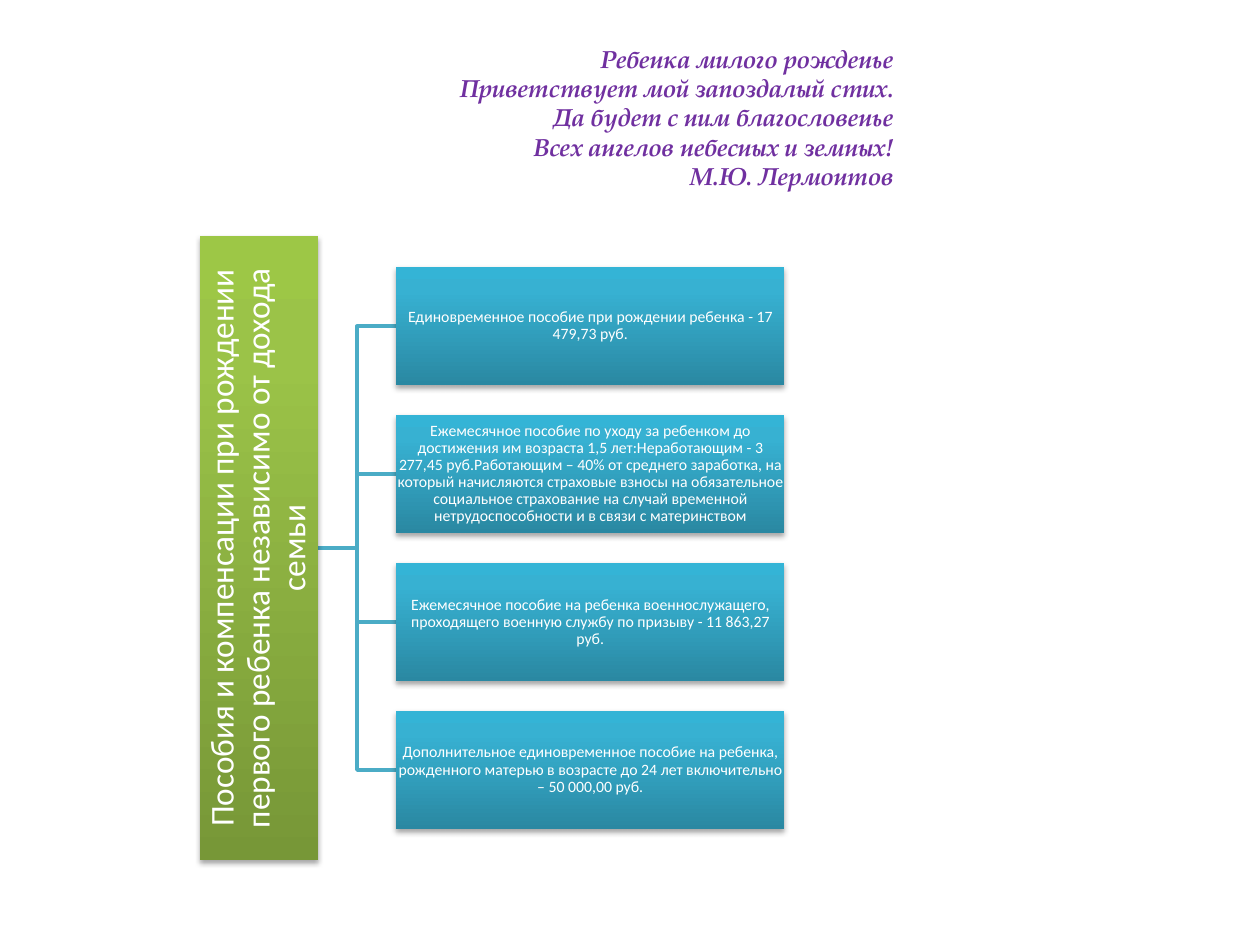
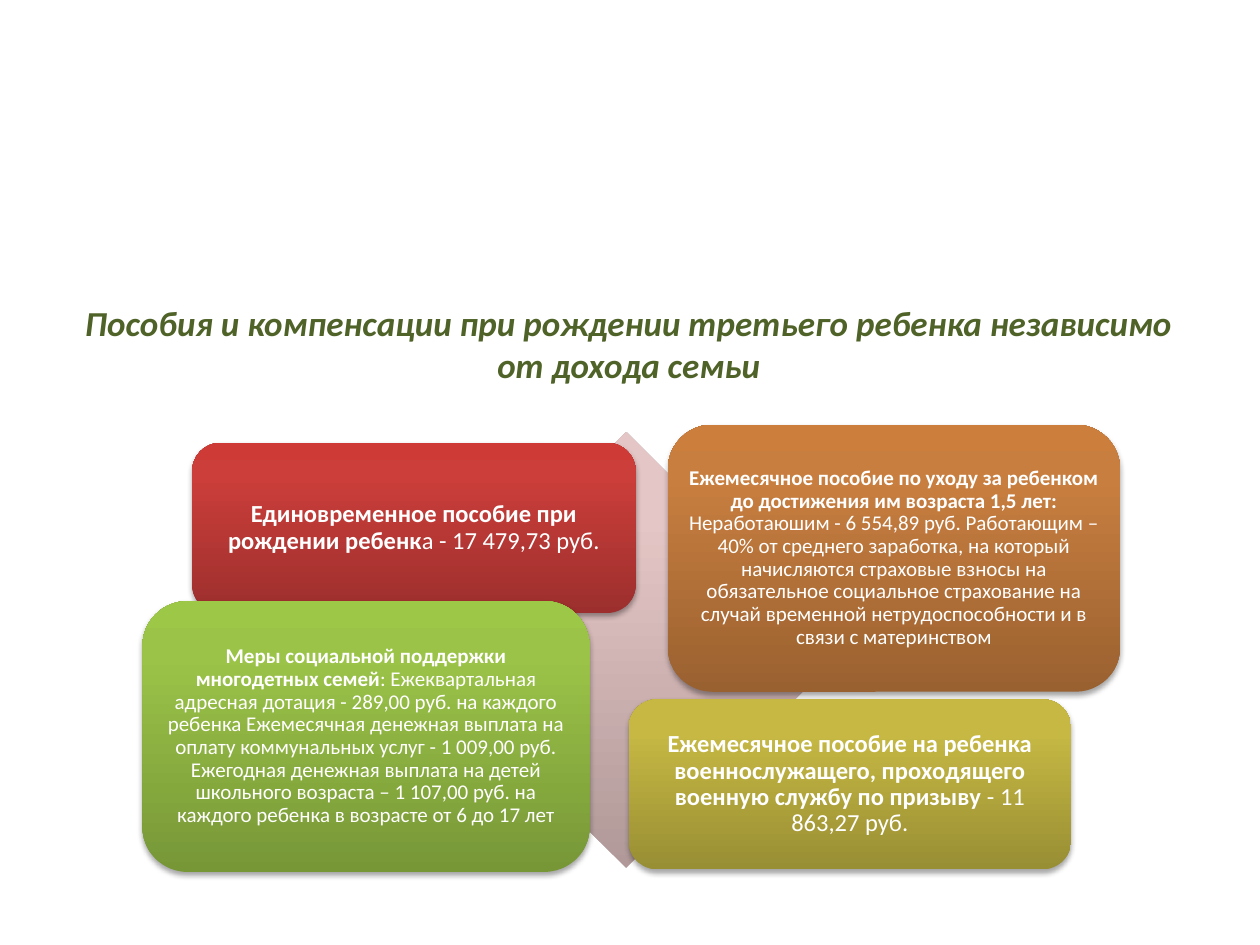
import pptx
import pptx.util
import pptx.oxml
import pptx.oxml.ns
import pptx.dml.color
import pptx.enum.shapes
import pptx.enum.text

KIND = pptx.enum.shapes.MSO_SHAPE
ALIGN = pptx.enum.text.PP_ALIGN
CELL = pptx.util.Inches(0.1)  # the slide is a grid of 100 by 75 cells
COLS, ROWS = 100, 75

HUES = {"white": "FFFFFF", "verse": "7030A0", "head": "4F6228", "link": "4BACC6",
        "shade": "000000"}
# Gradient stops at 0, 80 and 100 percent, from bottom to top
FADES = {
    "green": ("779737", "9BC348", "9DC746"),
    "blue": ("2A88A2", "37B1D2", "34B4D6"),
    "rose": ("B09998", "E5C6C6", "E6C7C6"),
    "red": ("9C2F2D", "CB3E3A", "CE3B37"),
    "brown": ("9A6130", "C87E3F", "CC7E3C"),
    "olive": ("988E34", "C6B843", "C9BB41"),
}

VERSE = """Ребенка милого рожденье
Приветствует мой запоздалый стих.
Да будет с ним благословенье
Всех ангелов небесных и земных!
М.Ю. Лермонтов"""
ROOT = "Пособия и компенсации при рождении первого ребенка независимо от дохода семьи"
ITEMS = [
    "Единовременное пособие при рождении ребенка - 17 479,73 руб.",
    "Ежемесячное пособие по уходу за ребенком до достижения им возраста 1,5 лет:"
    "Неработающим - 3 277,45 руб.Работающим – 40% от среднего заработка, на который "
    "начисляются страховые взносы на обязательное социальное страхование на случай "
    "временной нетрудоспособности и в связи с материнством",
    "Ежемесячное пособие на ребенка военнослужащего, проходящего военную службу "
    "по призыву - 11 863,27 руб.",
    "Дополнительное единовременное пособие на ребенка, рожденного матерью в возрасте "
    "до 24 лет включительно – 50 000,00 руб.",
]
HEAD = "Пособия и компенсации при рождении третьего ребенка независимо от дохода семьи"
# Place in cells, fade, text size, inset, bold text, plain text
CARDS = [
    ((3.95, 1.45, 35.2, 13.5), "red", 14, 0.06,
     "Единовременное пособие при рождении ребенк", "а - 17 479,73 руб."),
    ((41.7, 0, 35.9, 21.2), "brown", 12, 0.05,
     "Ежемесячное пособие по уходу за ребенком до достижения им возраста 1,5 лет: ",
     "Неработаюшим - 6 554,89 руб. Работающим – 40% от среднего заработка, на который "
     "начисляются страховые взносы на обязательное социальное страхование на случай "
     "временной нетрудоспособности и в связи с материнством"),
    ((38.6, 21.8, 35.1, 13.5), "olive", 14, 0.06,
     "Ежемесячное пособие на ребенка военнослужащего, проходящего военную службу "
     "по призыву", " - 11 863,27 руб."),
    ((0, 14, 35.5, 21.5), "green", 12, 0.05,
     "Меры социальной поддержки многодетных семей",
     ": Ежеквартальная адресная дотация - 289,00 руб. на каждого ребенка Ежемесячная "
     "денежная выплата на оплату коммунальных услуг - 1 009,00 руб. Ежегодная денежная "
     "выплата на детей школьного возраста – 1 107,00 руб. на каждого ребенка в возрасте "
     "от 6 до 17 лет"),
]


def emu(*cells):
    return [round(c * CELL) for c in cells]


def rgb(name):
    return pptx.dml.color.RGBColor.from_string(HUES[name])


def node(xml):
    return pptx.oxml.parse_xml(xml.replace(">", " " + pptx.oxml.ns.nsdecls("a") + ">", 1))


def write(shape, *runs, size=9, hue="white", font="Calibri", slant=False,
          align=ALIGN.CENTER, space=0.9, inset=0):
    """Write (text, bold) runs as one paragraph; line feeds become line breaks."""
    frame = shape.text_frame
    frame.word_wrap = True
    frame.vertical_anchor = pptx.enum.text.MSO_ANCHOR.MIDDLE
    if inset is not None:
        frame.margin_left = frame.margin_right = pptx.util.Inches(inset)
        frame.margin_top = frame.margin_bottom = pptx.util.Inches(inset)
    para = frame.paragraphs[0]
    para.alignment, para.line_spacing = align, space
    for text, bold in runs:
        for i, line in enumerate(text.split("\n")):
            if i:
                para.add_line_break()
            run = para.add_run()
            run.text = line
            face = run.font
            face.name, face.size = font, pptx.util.Pt(size)
            face.bold, face.italic = bold, slant
            face.color.rgb = rgb(hue)


def block(slide, kind, box, fade, shade=True):
    """Add a borderless shape with a gradient and, if asked, a soft shadow."""
    shape = slide.shapes.add_shape(kind, *emu(*box))
    shape.line.fill.background()
    shape.fill.gradient()
    props = shape.fill._xPr
    stops = "".join(f'<a:gs pos="{pos}000"><a:srgbClr val="{hue}"/></a:gs>'
                    for pos, hue in zip((0, 80, 100), FADES[fade]))
    props.replace(props.find(pptx.oxml.ns.qn("a:gradFill")), node(
        f'<a:gradFill rotWithShape="0"><a:gsLst>{stops}</a:gsLst>'
        '<a:lin ang="16200000" scaled="0"/></a:gradFill>'))
    shape.shadow.inherit = False
    if shade:
        props.find(pptx.oxml.ns.qn("a:effectLst")).append(node(
            '<a:outerShdw blurRad="40000" dist="23000" dir="5400000" rotWithShape="0">'
            f'<a:srgbClr val="{HUES["shade"]}"><a:alpha val="35000"/></a:srgbClr>'
            '</a:outerShdw>'))
    return shape


def title(slide, box, text, **style):
    shape = slide.shapes.add_textbox(*emu(*box))
    write(shape, (text, True), slant=True, space=1, inset=None, **style)


def link(slide, start, end):
    """Draw a stepped line that turns halfway between two points."""
    mid = (start[0] + end[0]) / 2
    pen = slide.shapes.build_freeform(*emu(*start))
    pen.add_line_segments([emu(mid, start[1]), emu(mid, end[1]), emu(*end)], close=False)
    line = pen.convert_to_shape()
    line.fill.background()
    line.line.color.rgb = rgb("link")
    line.line.width = pptx.util.Pt(2)
    line.shadow.inherit = False


def tree(slide, box, root, items):
    """Root bar on the left, joined to a centred column of equal cards."""
    left, top, wide, high = box
    side = high / 5.27
    step = 1.25 * side
    gap = 0.66 * side
    mid = top + high / 2
    card = left + side + gap
    tops = [mid - side / 2 + (i - (len(items) - 1) / 2) * step for i in range(len(items))]

    # Links
    for y in reversed(tops):
        link(slide, (left + side, mid), (card, y + side / 2))

    # Root bar, turned to read upwards
    bar = block(slide, KIND.RECTANGLE,
                (left + (side - high) / 2, mid - side / 2, high, side), "green")
    bar.rotation = 270
    write(bar, (root, False), size=19)

    # Cards
    for y, text in zip(tops, items):
        shape = block(slide, KIND.RECTANGLE, (card, y, wide - side - gap, side), "blue")
        write(shape, (text, False))


def cluster(slide, box, cards):
    """Diamond with rounded cards around it."""
    left, top, wide, high = box
    size = high - 0.9
    block(slide, KIND.DIAMOND, (left + 21.1, top + 0.6, size, size), "rose", shade=False)
    for (x, y, w, h), fade, size, inset, bold, plain in cards:
        shape = block(slide, KIND.ROUNDED_RECTANGLE, (left + x, top + y, w, h), fade)
        write(shape, (bold, True), (plain, False), size=size, inset=inset)


def main():
    deck = pptx.Presentation()
    deck.slide_width, deck.slide_height = emu(COLS, ROWS)
    blank = deck.slide_layouts[6]

    # First child
    slide = deck.slides.add_slide(blank)
    title(slide, (5, 3, 66.9, 12.6), VERSE, size=14, hue="verse",
          font="TeX Gyre Pagella", align=ALIGN.RIGHT)
    tree(slide, (15.84, 18.75, 46.42, 49.5), ROOT, ITEMS)

    # Third child
    slide = deck.slides.add_slide(blank)
    title(slide, (4.9, 22.55, 90, 9.4), HEAD, size=20, hue="head")
    cluster(slide, (11.3, 33.7, 77.6, 35.5), CARDS)

    deck.save("out.pptx")


if __name__ == "__main__":
    main()
